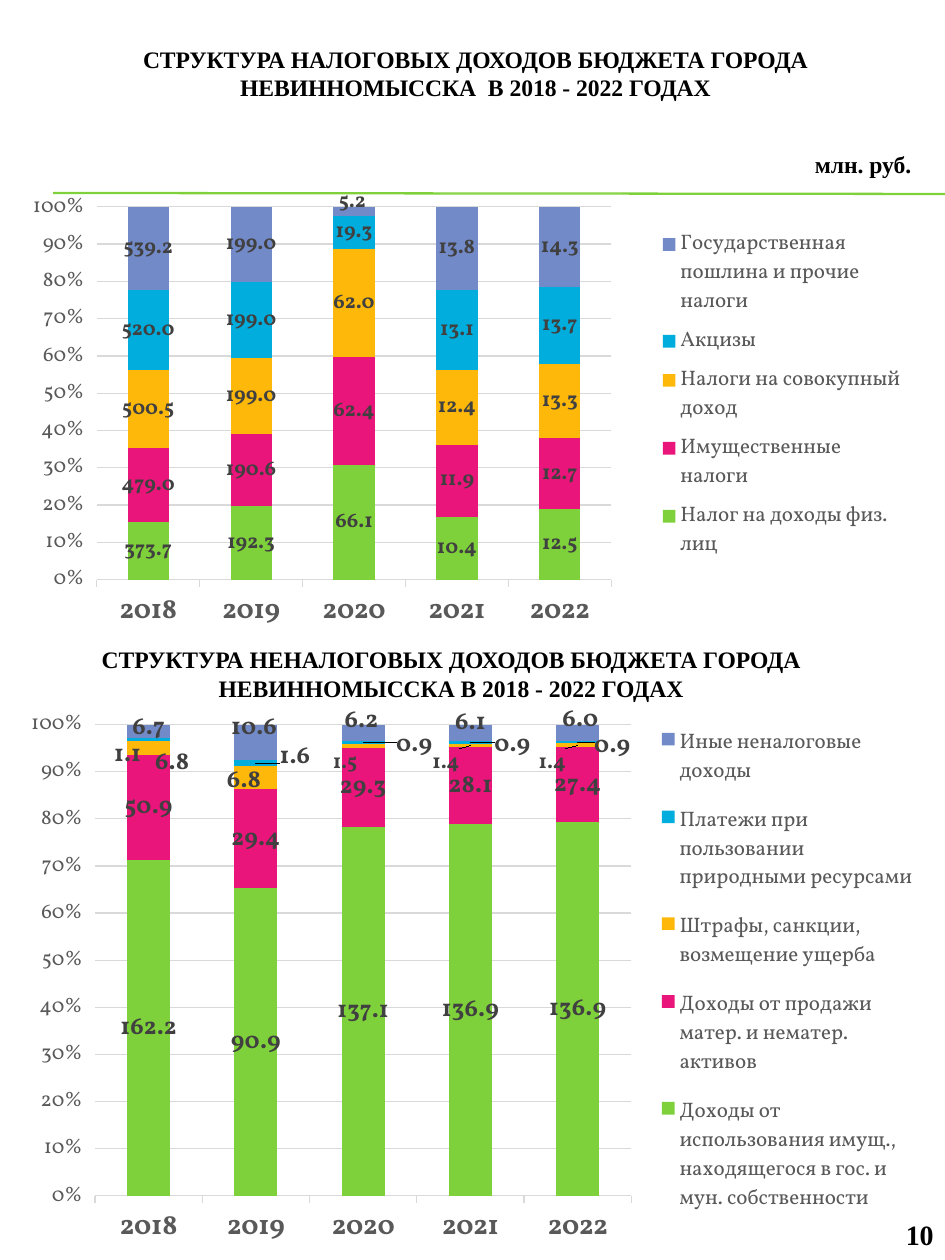
"""Build the slide on the structure of city budget revenues."""
from lxml.etree import SubElement
from pptx import Presentation
from pptx.chart.data import CategoryChartData
from pptx.dml.color import RGBColor
from pptx.enum.chart import (XL_CHART_TYPE, XL_LABEL_POSITION,
                             XL_LEGEND_POSITION, XL_TICK_MARK)
from pptx.enum.shapes import MSO_CONNECTOR
from pptx.enum.text import MSO_ANCHOR, MSO_AUTO_SIZE, PP_ALIGN
from pptx.oxml import parse_xml
from pptx.oxml.ns import nsdecls, qn
from pptx.util import Cm, Pt

BLACK = RGBColor(0x00, 0x00, 0x00)
DARK = RGBColor(0x40, 0x40, 0x40)
GREY = RGBColor(0x59, 0x59, 0x59)
PALE = RGBColor(0xD9, 0xD9, 0xD9)
GREEN = RGBColor(0x7F, 0xD1, 0x3B)
PINK = RGBColor(0xEA, 0x15, 0x7A)
AMBER = RGBColor(0xFE, 0xB8, 0x0A)
CYAN = RGBColor(0x00, 0xAD, 0xDC)
BLUE = RGBColor(0x73, 0x8A, 0xC8)
FILLS = [GREEN, PINK, AMBER, CYAN, BLUE]

SERIF = "Times New Roman"
FACE = "Vollkorn"
YEARS = ["2018", "2019", "2020", "2021", "2022"]

NO_LEADERS = (
    f'<c:extLst {nsdecls("c")}>'
    '<c:ext uri="{CE6537A1-D6FC-4f65-9D91-7224C49458BB}" xmlns:c15='
    '"http://schemas.microsoft.com/office/drawing/2012/chart">'
    '<c15:showLeaderLines val="0"/></c:ext></c:extLst>')

TAXES = [
    ("Налог на доходы физ. лиц", [373.7, 192.3, 66.1, 10.4, 12.5]),
    ("Имущественные налоги", [479, 190.6, 62.4, 11.9, 12.7]),
    ("Налоги на совокупный доход", [500.5, 199, 62, 12.4, 13.3]),
    ("Акцизы", [520, 199, 19.3, 13.1, 13.7]),
    ("Государственная пошлина и прочие налоги",
     [539.2, 199, 5.2, 13.8, 14.3]),
]
OTHERS = [
    ("Доходы от использования имущ., находящегося в гос. и мун. собственности",
     [162.2, 90.9, 137.1, 136.9, 136.9]),
    ("Доходы от продажи матер. и нематер. активов",
     [50.9, 29.4, 29.3, 28.1, 27.4]),
    ("Штрафы, санкции, возмещение ущерба", [6.8, 6.8, 1.5, 1.4, 1.4]),
    ("Платежи при пользовании природными ресурсами",
     [1.1, 1.6, 0.9, 0.9, 0.9]),
    ("Иные неналоговые доходы", [6.7, 10.6, 6.2, 6.1, 6]),
]
TAX_MOVES = {(4, 2): (-0.2, -2, 12)}
OTHER_MOVES = {
    (2, 0): (2.6, 2.7, 14), (2, 1): (-1.3, 0.7, 14),
    (2, 2): (-2, 3.2, 12), (2, 3): (-2.7, 3.2, 12), (2, 4): (-2.8, 3.2, 12),
    (3, 0): (-2.3, 2.7, 14), (3, 1): (4.3, -1.1, 14),
    (3, 2): (5.6, 0.4, 14), (3, 3): (4.6, 0.4, 14), (3, 4): (3.8, 0.7, 14),
    (4, 0): (0, -0.7, 14), (4, 1): (-0.2, -2.7, 14), (4, 2): (-0.2, -2.2, 14),
    (4, 3): (0, -1.8, 14), (4, 4): (0.3, -2.3, 14),
}


def style(font, size, color, bold=False, name=FACE):
    """Set the size, colour, weight and face of a font."""
    font.size = Pt(size)
    font.color.rgb = color
    font.bold = bold
    font.name = name


def write(shape, box, text, size, align, wrap=True):
    """Place a shape and fill it with one bold paragraph."""
    shape.left, shape.top, shape.width, shape.height = map(Cm, box)
    frame = shape.text_frame
    frame.text = text
    frame.word_wrap = wrap
    frame.auto_size = MSO_AUTO_SIZE.SHAPE_TO_FIT_TEXT
    frame.vertical_anchor = MSO_ANCHOR.TOP
    line = frame.paragraphs[0]
    line.alignment = align
    style(line.font, size, BLACK, True, SERIF)


def add_text(slide, box, *args):
    """Add a text box."""
    write(slide.shapes.add_textbox(*map(Cm, box)), box, *args)


def add_rule(slide, start, end):
    """Add a thin green line without a shadow."""
    rule = slide.shapes.add_connector(
        MSO_CONNECTOR.STRAIGHT, *map(Cm, start + end))
    rule.line.color.rgb = GREEN
    rule.line.width = Pt(0.75)
    rule._element.spPr.append(parse_xml(f"<a:effectLst {nsdecls('a')}/>"))


def set_layout(node, spot, sizes, **modes):
    """Give a chart part a manual layout in percent of the chart."""
    old = node.find(qn("c:layout"))
    if old is not None:
        node.remove(old)
    layout = parse_xml(f"<c:layout {nsdecls('c')}/>")
    manual = SubElement(layout, qn("c:manualLayout"))
    parts = {key: round(size / 100, 4) for key, size in zip("xywh", sizes)}
    for key, val in {**modes, **parts}.items():
        SubElement(manual, qn(f"c:{key}")).set("val", str(val))
    node.insert(spot, layout)


def set_axes(chart):
    """Format both axes and the grid."""
    cat, val = chart.category_axis, chart.value_axis
    style(cat.tick_labels.font, 16, GREY, True)
    style(val.tick_labels.font, 12, GREY)
    val.tick_labels.number_format = "0%"
    val.tick_labels.number_format_is_linked = False
    val.major_unit = 0.1
    val.format.line.fill.background()
    for line in (cat.format.line, val.major_gridlines.format.line):
        line.color.rgb = PALE
        line.width = Pt(0.75)
    for axis in (cat, val):
        axis.major_tick_mark = XL_TICK_MARK.OUTSIDE


def set_series(series, fill, size, moves):
    """Colour a series, label it and shift single labels."""
    series.format.fill.solid()
    series.format.fill.fore_color.rgb = fill
    labels = series.data_labels
    labels.show_value = True
    labels.position = XL_LABEL_POSITION.CENTER
    labels.number_format = "0.0"
    labels.number_format_is_linked = False
    style(labels.font, size, DARK, True)
    for point, (x, y, pts) in moves.items():
        label = series.points[point].data_label
        style(label.font, pts, DARK, True)
        label.position = XL_LABEL_POSITION.CENTER
        node = series._element.xpath(f"c:dLbls/c:dLbl[c:idx/@val='{point}']")
        set_layout(node[0], 1, (x, y))
    series._element.find(qn("c:dLbls")).append(parse_xml(NO_LEADERS))


def add_stack(slide, box, rows, size, moves, inner, side):
    """Add a full stacked column chart with a legend on the right."""
    data = CategoryChartData(number_format="0.0")
    data.categories = YEARS
    for name, vals in rows:
        data.add_series(name, vals)
    chart = slide.shapes.add_chart(
        XL_CHART_TYPE.COLUMN_STACKED_100, *map(Cm, box), data).chart
    style(chart.font, 10, BLACK)
    chart.has_title = False
    chart.has_legend = True
    legend = chart.legend
    legend.position = XL_LEGEND_POSITION.RIGHT
    legend.include_in_layout = False
    style(legend.font, 12, GREY)
    set_layout(legend._element, 1, side, xMode="edge", yMode="edge")
    set_layout(chart._chartSpace.chart.plotArea, 0, inner,
               layoutTarget="inner", xMode="edge", yMode="edge")
    set_axes(chart)
    plot = chart.plots[0]
    plot.gap_width = 150
    plot.overlap = 100
    plot.vary_by_categories = False
    for row, (series, fill) in enumerate(zip(plot.series, FILLS)):
        own = {col: move for (r, col), move in moves.items() if r == row}
        set_series(series, fill, size, own)


def main():
    """Build and save the slide."""
    deck = Presentation()
    deck.slide_width, deck.slide_height = Cm(19.05), Cm(25.4)
    slide = deck.slides.add_slide(deck.slide_layouts[5])
    for top in (3.88, 3.9):
        add_rule(slide, (1.07, top), (19.05, top + 0.02))
    write(slide.shapes.title, (1.05, 0.77, 17.07, 1.42),
          "СТРУКТУРА НАЛОГОВЫХ ДОХОДОВ БЮДЖЕТА ГОРОДА "
          "НЕВИННОМЫССКА  В 2018 - 2022 ГОДАХ", 13.5, PP_ALIGN.CENTER)
    add_text(slide, (16.13, 2.9, 2.54, 0.84), "млн. руб.", 13.5,
             PP_ALIGN.CENTER, False)
    add_text(slide, (0.79, 12.88, 16.61, 1.42),
             "СТРУКТУРА НЕНАЛОГОВЫХ ДОХОДОВ БЮДЖЕТА ГОРОДА "
             "НЕВИННОМЫССКА В 2018 - 2022 ГОДАХ", 13.5, PP_ALIGN.CENTER)
    add_stack(slide, (0.33, 3.73, 18.01, 9.37), TAXES, 12, TAX_MOVES,
              (9, 4.7, 57.6, 80.2), (72, 7.5, 28, 75.3))
    add_stack(slide, (0.3, 14.17, 18.36, 11.18), OTHERS, 14, OTHER_MOVES,
              (8.8, 3.9, 58.9, 85), (72, 1, 28, 94.7))
    add_text(slide, (18.01, 24.41, 1.3, 0.94), "10", 16, PP_ALIGN.LEFT)
    deck.save("out.pptx")


if __name__ == "__main__":
    main()
